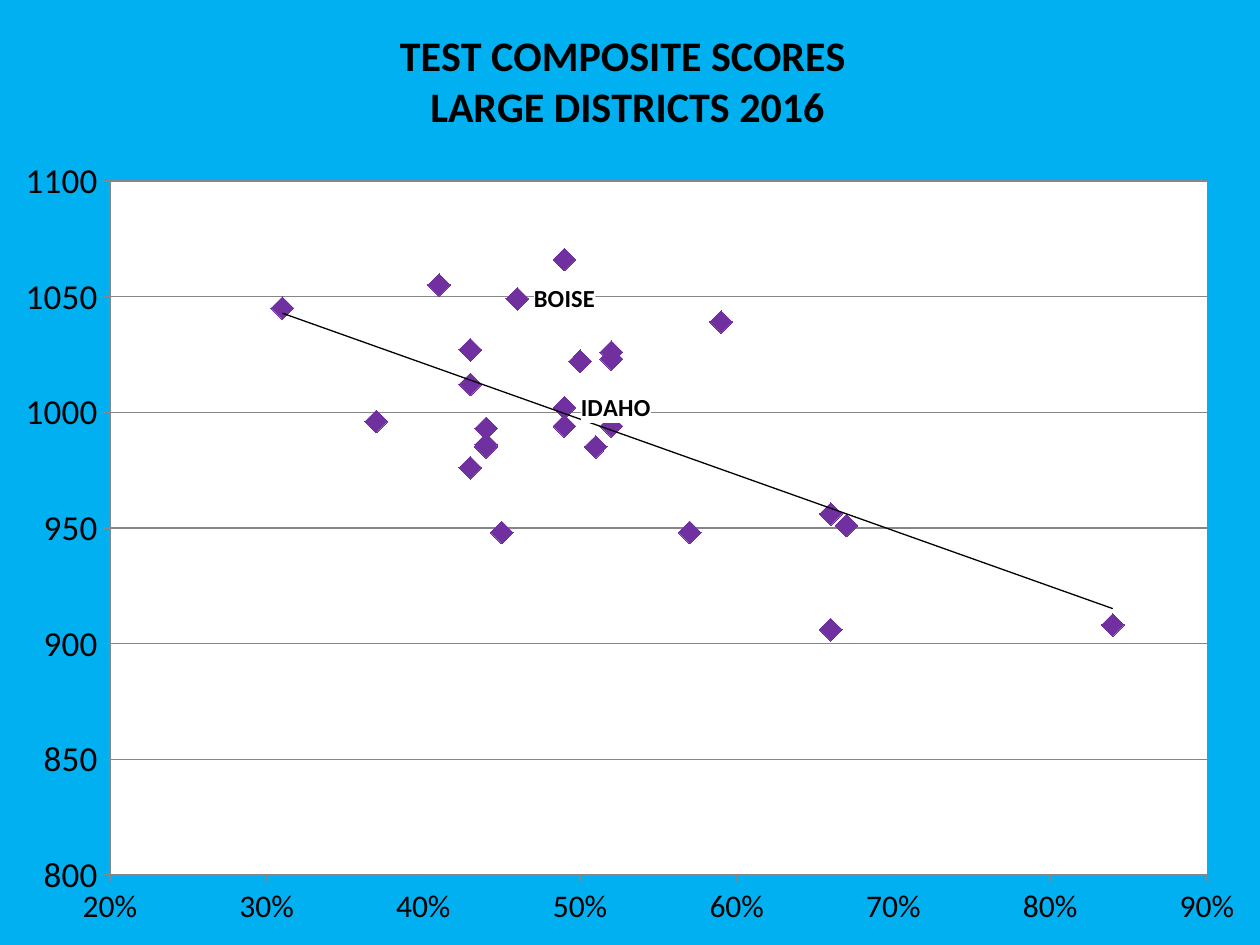
"""Build a slide with a scatter chart of composite test scores."""
import pptx
import pptx.chart.data
import pptx.dml.color
import pptx.enum.chart
import pptx.oxml
import pptx.oxml.ns
import pptx.util

PX = 914400 // 126
WIDE, HIGH = 1260, 945
NS = pptx.oxml.ns.nsdecls("c", "a")
SHARES = [49, 41, 46, 31, 59, 43, 52, 52, 50, 43, 49, 37, 52,
          49, 44, 44, 51, 44, 43, 66, 67, 45, 57, 84, 66]
SCORES = [1066, 1055, 1049, 1045, 1039, 1027, 1026, 1023, 1022, 1012, 1002, 996, 994,
          994, 993, 986, 985, 985, 976, 956, 951, 948, 948, 908, 906]
NAMES = {2: "BOISE", 10: "IDAHO"}


def paint(part, color):
    """Give a fill or a line colour format a solid colour."""
    part.solid()
    part.fore_color.rgb = pptx.dml.color.RGBColor.from_string(color)


def style(font, size, bold=False, color="000000"):
    """Format a font."""
    font.name = "Calibri"
    font.size = pptx.util.Pt(size)
    font.bold = bold
    paint(font.fill, color)


def write(frame, text, **form):
    """Put text into a frame, one paragraph a line."""
    frame.text = text
    for para in frame.paragraphs:
        for run in para.runs:
            style(run.font, **form)


def solid(color):
    """Return a chart shape property element with a solid fill and no line."""
    return pptx.oxml.parse_xml(
        f'<c:spPr {NS}><a:solidFill><a:srgbClr val="{color}"/></a:solidFill>'
        '<a:ln><a:noFill/></a:ln></c:spPr>')


def place(left, top, width=None, height=None):
    """Return a manual layout from px, with a size for the inner plot."""
    pairs = [("xMode", "edge"), ("yMode", "edge"),
             ("x", round(left / WIDE, 4)), ("y", round(top / HIGH, 4))]
    if width:
        pairs = [("layoutTarget", "inner")] + pairs
        pairs += [("w", round(width / WIDE, 4)), ("h", round(height / HIGH, 4))]
    body = "".join(f'<c:{tag} val="{val}"/>' for tag, val in pairs)
    return pptx.oxml.parse_xml(
        f"<c:layout {NS}><c:manualLayout>{body}</c:manualLayout></c:layout>")


def swap(parent, layout):
    """Replace the layout of a chart part."""
    for old in parent.findall(pptx.oxml.ns.qn("c:layout")):
        parent.remove(old)
    tx = parent.find(pptx.oxml.ns.qn("c:tx"))
    parent.insert(0 if tx is None else 1, layout)


def scale(axis, low, high, step, form, size):
    """Set the range, number format and look of an axis."""
    axis.minimum_scale, axis.maximum_scale, axis.major_unit = low, high, step
    axis.major_tick_mark = pptx.enum.chart.XL_TICK_MARK.OUTSIDE
    axis.tick_labels.number_format = form
    axis.tick_labels.number_format_is_linked = False
    style(axis.tick_labels.font, size)
    paint(axis.format.line.fill, "868686")


def label(series, index, text):
    """Name one point at its right on a white ground."""
    tag = series.points[index].data_label
    write(tag.text_frame, text, size=14, bold=True)
    tag.position = pptx.enum.chart.XL_LABEL_POSITION.RIGHT
    node = tag._dLbl
    for old in node.findall(pptx.oxml.ns.qn("c:spPr")):
        node.remove(old)
    node.find(pptx.oxml.ns.qn("c:tx")).addnext(solid("FFFFFF"))


def trend(series):
    """Add a thin black linear trend line."""
    line = pptx.oxml.parse_xml(
        f'<c:trendline {NS}><c:spPr><a:ln w="9525"><a:solidFill>'
        '<a:srgbClr val="000000"/></a:solidFill></a:ln></c:spPr>'
        '<c:trendlineType val="linear"/><c:dispRSqr val="0"/>'
        '<c:dispEq val="0"/></c:trendline>')
    series._element.find(pptx.oxml.ns.qn("c:xVal")).addprevious(line)


def dots(series):
    """Show the points as purple diamonds without a joining line."""
    series.format.line.fill.background()
    mark = series.marker
    mark.style = pptx.enum.chart.XL_MARKER_STYLE.DIAMOND
    mark.size = 13
    paint(mark.format.fill, "7030A0")
    paint(mark.format.line.fill, "7030A0")


def plot(slide):
    """Add the scatter chart over the whole slide."""
    data = pptx.chart.data.XyChartData()
    group = data.add_series("Series 1")
    for share, score in zip(SHARES, SCORES):
        group.add_data_point(share / 100, score)
    kind = pptx.enum.chart.XL_CHART_TYPE.XY_SCATTER
    chart = slide.shapes.add_chart(kind, 0, 0, WIDE * PX, HIGH * PX, data).chart
    chart.has_legend = False
    style(chart.font, 10)
    chart.plots[0].vary_by_categories = False
    return chart


def main():
    """Build and save the slide."""
    deck = pptx.Presentation()
    deck.slide_width, deck.slide_height = WIDE * PX, HIGH * PX
    chart = plot(deck.slides.add_slide(deck.slide_layouts[6]))

    chart.has_title = True
    write(chart.chart_title.text_frame, "TEST COMPOSITE SCORES \nLARGE DISTRICTS 2016",
          size=24, bold=True)
    swap(chart.chart_title._element, place(396, 26))
    chart.chart_title.include_in_layout = False

    scale(chart.category_axis, 0.2, 0.9, 0.1, "0%", 18)
    scale(chart.value_axis, 800, 1100, 50, "0", 20)
    chart.category_axis.has_major_gridlines = False
    chart.value_axis.has_major_gridlines = True
    paint(chart.value_axis.major_gridlines.format.line.fill, "868686")

    series = chart.plots[0].series[0]
    series.smooth = False
    dots(series)
    for index, text in NAMES.items():
        label(series, index, text)
    trend(series)

    root = chart._chartSpace
    root.find(pptx.oxml.ns.qn("c:chart")).addnext(solid("00B0F0"))
    area = root.chart.plotArea
    swap(area, place(110, 181, 1097, 694))
    area.append(solid("FFFFFF"))
    deck.save("out.pptx")


if __name__ == "__main__":
    main()
